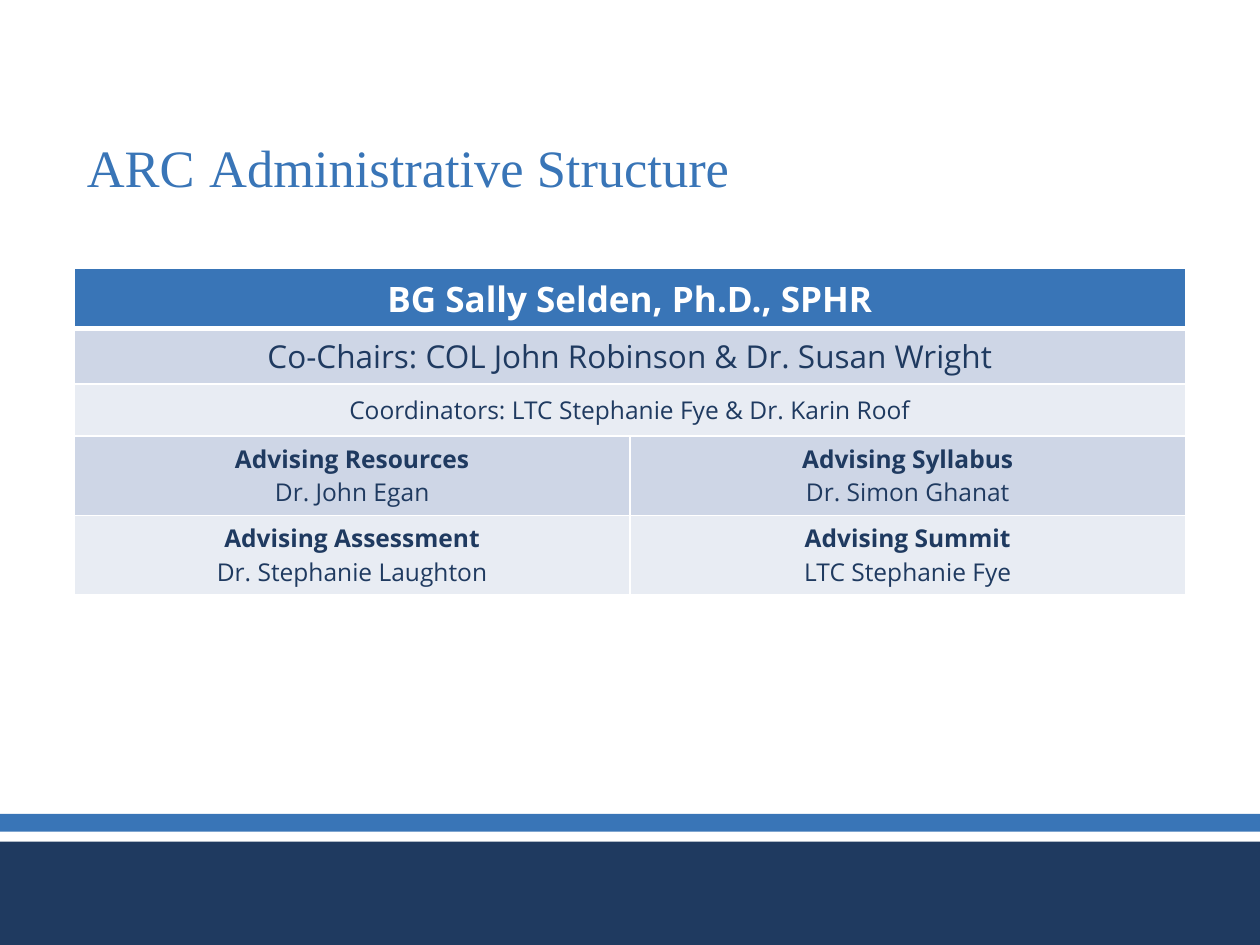
from lxml import etree
from pptx import Presentation
from pptx.dml.color import RGBColor
from pptx.enum import shapes, text
from pptx.oxml import ns
from pptx.util import Inches, Pt

NAVY = RGBColor(0x1F, 0x3A, 0x60)
BLUE = RGBColor(0x39, 0x75, 0xB7)
WHITE = RGBColor(0xFF, 0xFF, 0xFF)
RED = RGBColor(0xFF, 0x00, 0x00)
MIST = RGBColor(0xCE, 0xD6, 0xE6)
PALE = RGBColor(0xE8, 0xEC, 0xF3)

TITLE = [("ARC", 30, BLUE), (" ", 33, RED), ("Administrative Structure", 30, BLUE)]
BANDS = [(6.68, 0.82, NAVY), (6.46, 0.14, BLUE)]
LEADERS = [
    ("BG Sally Selden, Ph.D., SPHR", 20, True, WHITE, text.MSO_ANCHOR.MIDDLE),
    ("Co-Chairs: COL John Robinson & Dr. Susan Wright", 18, False, NAVY, text.MSO_ANCHOR.TOP),
    ("Coordinators: LTC Stephanie Fye & Dr. Karin Roof", 14, False, NAVY, text.MSO_ANCHOR.MIDDLE),
]
COMMITTEES = [
    [("Advising Resources", "Dr. John Egan"), ("Advising Syllabus", "Dr. Simon Ghanat")],
    [("Advising Assessment", "Dr. Stephanie Laughton"), ("Advising Summit", "LTC Stephanie Fye")],
]
ROW_FILLS = [BLUE, MIST, PALE, MIST, PALE]
ROW_HEIGHT = 0.41
COLUMN_WIDTH = 4.41


def add_text(paragraph, content, size=14, color=NAVY, bold=False, font="Open Sans"):
    run = paragraph.add_run()
    run.text = content
    run.font.name = font
    run.font.size = Pt(size)
    run.font.bold = bold
    run.font.color.rgb = color


def set_borders(cell, bottom):
    properties = cell._tc.get_or_add_tcPr()
    for index, (side, width) in enumerate([("L", 1), ("R", 1), ("T", 1), ("B", bottom)]):
        line = etree.Element(ns.qn(f"a:ln{side}"), w=str(Pt(width)))
        fill = etree.SubElement(line, ns.qn("a:solidFill"))
        etree.SubElement(fill, ns.qn("a:srgbClr"), val=str(WHITE))
        properties.insert(index, line)


def add_bands(slide):
    for top, height, color in BANDS:
        band = slide.shapes.add_shape(
            shapes.MSO_SHAPE.RECTANGLE, 0, Inches(top), Inches(10), Inches(height))
        band.shadow.inherit = False
        band.fill.solid()
        band.fill.fore_color.rgb = color
        band.line.fill.background()


def add_title(slide):
    frame = slide.shapes.add_textbox(
        Inches(0.59), Inches(0.4), Inches(8.81), Inches(1.24)).text_frame
    frame.word_wrap = True
    frame.vertical_anchor = text.MSO_ANCHOR.BOTTOM
    paragraph = frame.paragraphs[0]
    paragraph.line_spacing = 0.9
    for content, size, color in TITLE:
        add_text(paragraph, content, size=size, color=color, font="Times New Roman")


def add_structure(slide):
    row_count = len(ROW_FILLS)
    table = slide.shapes.add_table(
        row_count, 2, Inches(0.59), Inches(2.13),
        Inches(2 * COLUMN_WIDTH), Inches(row_count * ROW_HEIGHT)).table
    for row, color in enumerate(ROW_FILLS):
        for column in range(2):
            cell = table.cell(row, column)
            cell.fill.solid()
            cell.fill.fore_color.rgb = color
            cell.vertical_anchor = text.MSO_ANCHOR.MIDDLE
            set_borders(cell, 3 if row == 0 else 1)
    for row, (content, size, bold, color, anchor) in enumerate(LEADERS):
        cell = table.cell(row, 0)
        cell.merge(table.cell(row, 1))
        cell.vertical_anchor = anchor
        paragraph = cell.text_frame.paragraphs[0]
        paragraph.alignment = text.PP_ALIGN.CENTER
        add_text(paragraph, content, size=size, color=color, bold=bold)
    for row, committees in enumerate(COMMITTEES, len(LEADERS)):
        for column, (committee, chair) in enumerate(committees):
            frame = table.cell(row, column).text_frame
            heading, name = frame.paragraphs[0], frame.add_paragraph()
            heading.alignment = name.alignment = text.PP_ALIGN.CENTER
            add_text(heading, committee, bold=True)
            add_text(name, chair)


def main():
    presentation = Presentation()
    presentation.slide_width = Inches(10)
    presentation.slide_height = Inches(7.5)
    slide = presentation.slides.add_slide(presentation.slide_layouts[6])
    add_bands(slide)
    add_structure(slide)
    add_title(slide)
    presentation.save("out.pptx")


if __name__ == "__main__":
    main()
